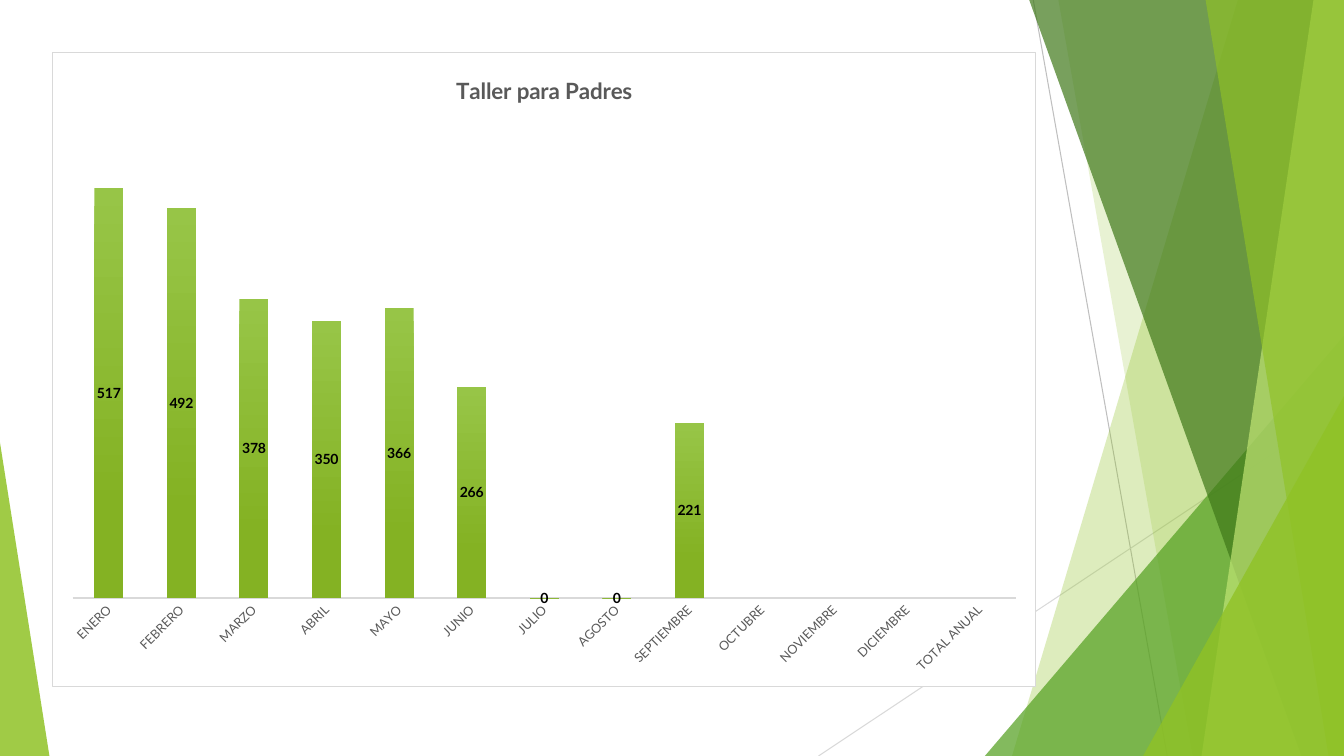
from dataclasses import dataclass

from lxml import etree
from pptx import Presentation
from pptx.chart.data import CategoryChartData
from pptx.dml.color import RGBColor
from pptx.enum.chart import XL_CHART_TYPE, XL_LABEL_POSITION, XL_TICK_MARK
from pptx.enum.shapes import MSO_CONNECTOR, MSO_SHAPE
from pptx.oxml import parse_xml
from pptx.oxml.ns import nsdecls, qn
from pptx.util import Inches, Pt

STACKED = XL_CHART_TYPE.COLUMN_STACKED
CENTER = XL_LABEL_POSITION.CENTER
NO_TICK = XL_TICK_MARK.NONE
STRAIGHT = MSO_CONNECTOR.STRAIGHT
TRIANGLE = MSO_SHAPE.ISOSCELES_TRIANGLE

WIDE, HIGH = Inches(13.33), Inches(7.5)


@dataclass(frozen=True)
class Theme:
    font: str = "Lato"
    lime: str = "90C226"
    pale: str = "C0E474"
    green: str = "54A021"
    dark: str = "3F7819"
    bar_top: str = "97C547"
    bar_end: str = "84B223"
    ink: str = "000000"
    text: str = "595959"
    rule: str = "D9D9D9"
    edge: str = "BFBFBF"
    paper: str = "FFFFFF"
    title: int = 16
    label: int = 10
    month: int = 9


THEME = Theme()

# Start and end points, in percent of the slide
LINES = [
    ((76.88, 0), (86.85, 100), THEME.edge),
    ((100, 53.73), (60.9, 100), THEME.rule),
]
# Left edge at the top and at the bottom, colour, opacity
BACK = [
    (92.1, 75.3, THEME.lime, 30),
    (78.75, 88.73, THEME.lime, 20),
]
FRONT = [
    (76.58, 96.83, THEME.dark, 70),
    (97.73, 89.4, THEME.pale, 70),
    (89.7, 98.85, THEME.lime, 65),
]
# Left, top, width, apex, colour, opacity
SLOPE = (73.28, 44.4, 26.72, 1, THEME.green, 72)
CORNERS = [
    (85.05, 52.4, 14.95, 1, THEME.lime, 80),
    (0, 58.53, 3.68, 0, THEME.lime, 85),
]
FRAME = (3.9, 6.93, 73.2, 84)
PLOT = {"x": 0.02, "y": 0.11, "w": 0.96, "h": 0.75}

MONTHS = ["ENERO", "FEBRERO", "MARZO", "ABRIL", "MAYO", "JUNIO", "JULIO",
          "AGOSTO", "SEPTIEMBRE", "OCTUBRE", "NOVIEMBRE", "DICIEMBRE",
          "TOTAL ANUAL"]
COUNTS = [517, 492, 378, 350, 366, 266, 0, 0, 221, None, None, None, None]


def across(share):
    return round(WIDE * share / 100)


def down(share):
    return round(HIGH * share / 100)


def rgb(code):
    return RGBColor.from_string(code)


def apply(item, **values):
    for name, value in values.items():
        setattr(item, name, value)


def style(font, size, color, bold=False):
    apply(font, name=THEME.font, size=Pt(size), bold=bold)
    font.color.rgb = rgb(color)


def tint(shape, color, alpha):
    """Fill a shape with a see-through colour and drop its outline."""
    shape.shadow.inherit = False
    shape.line.fill.background()
    shape.fill.solid()
    shape.fill.fore_color.rgb = rgb(color)
    tone = shape.fill._xPr.find(".//" + qn("a:srgbClr"))
    etree.SubElement(tone, qn("a:alpha")).set("val", str(alpha * 1000))


def add_line(slide, start, end, color):
    line = slide.shapes.add_connector(
        STRAIGHT, across(start[0]), down(start[1]),
        across(end[0]), down(end[1]))
    line.line.width = Pt(0.75)
    line.line.fill.solid()
    line.line.fill.fore_color.rgb = rgb(color)
    etree.SubElement(line._element.spPr, qn("a:effectLst"))


def add_band(slide, top, base, color, alpha):
    """Draw a full-height band from a slanted left edge to the right side."""
    pen = slide.shapes.build_freeform(across(top), 0)
    pen.add_line_segments(
        [(WIDE, 0), (WIDE, HIGH), (across(base), HIGH)], close=True)
    tint(pen.convert_to_shape(), color, alpha)


def add_wedge(slide, left, top, width, apex, color, alpha):
    """Draw a right triangle that stands on the bottom of the slide."""
    wedge = slide.shapes.add_shape(
        TRIANGLE, across(left), down(top), across(width), down(100 - top))
    wedge.adjustments[0] = apex
    tint(wedge, color, alpha)


def set_frame(chart):
    """Give the chart its paper, its border and a fixed plot area."""
    body = chart._chartSpace.find(qn("c:chart"))
    body.addnext(parse_xml(
        f'<c:spPr {nsdecls("c", "a")}>'
        f'<a:solidFill><a:srgbClr val="{THEME.paper}"/></a:solidFill>'
        f'<a:ln w="{Pt(0.75)}"><a:solidFill><a:srgbClr val="{THEME.rule}"/>'
        '</a:solidFill></a:ln></c:spPr>'))
    area = body.find(qn("c:plotArea"))
    for old in area.findall(qn("c:layout")):
        area.remove(old)
    layout = etree.Element(qn("c:layout"))
    manual = etree.SubElement(layout, qn("c:manualLayout"))
    marks = {"layoutTarget": "inner", "xMode": "edge", "yMode": "edge", **PLOT}
    for name, value in marks.items():
        etree.SubElement(manual, qn("c:" + name)).set("val", str(value))
    area.insert(0, layout)


def set_axes(chart):
    months, counts = chart.category_axis, chart.value_axis
    apply(months, major_tick_mark=NO_TICK, minor_tick_mark=NO_TICK,
          has_major_gridlines=False)
    style(months.tick_labels.font, THEME.month, THEME.text)
    turn = months._element.find(qn("c:txPr")).find(qn("a:bodyPr"))
    turn.set("rot", str(-45 * 60000))
    months.format.line.width = Pt(1)
    months.format.line.color.rgb = rgb(THEME.rule)
    apply(counts, visible=False, has_major_gridlines=False,
          minimum_scale=0, maximum_scale=600)


def set_bars(plot):
    apply(plot, gap_width=150, overlap=100, vary_by_categories=False)
    bars = plot.series[0]
    fill = bars.format.fill
    fill.gradient()
    fill.gradient_angle = 270
    stops = [(0, THEME.bar_top), (0.78, THEME.bar_end)]
    for stop, (place, color) in zip(fill.gradient_stops, stops):
        stop.position = place
        stop.color.rgb = rgb(color)
    labels = bars.data_labels
    apply(labels, show_value=True, position=CENTER)
    style(labels.font, THEME.label, THEME.ink, bold=True)


def add_bars(slide):
    data = CategoryChartData()
    data.categories = MONTHS
    data.add_series("Series 1", COUNTS)
    left, top, width, height = FRAME
    chart = slide.shapes.add_chart(
        STACKED, across(left), down(top), across(width), down(height),
        data).chart
    style(chart.font, THEME.label, THEME.ink)
    apply(chart, has_legend=False, has_title=True)
    title = chart.chart_title
    title.include_in_layout = False
    title.text_frame.text = "Taller para Padres"
    run = title.text_frame.paragraphs[0].runs[0]
    style(run.font, THEME.title, THEME.text, bold=True)
    set_frame(chart)
    set_axes(chart)
    set_bars(chart.plots[0])


def main():
    deck = Presentation()
    apply(deck, slide_width=WIDE, slide_height=HIGH)
    slide = deck.slides.add_slide(deck.slide_layouts[6])
    for line in LINES:
        add_line(slide, *line)
    for band in BACK:
        add_band(slide, *band)
    add_wedge(slide, *SLOPE)
    for band in FRONT:
        add_band(slide, *band)
    for wedge in CORNERS:
        add_wedge(slide, *wedge)
    add_bars(slide)
    deck.save("out.pptx")


if __name__ == "__main__":
    main()
